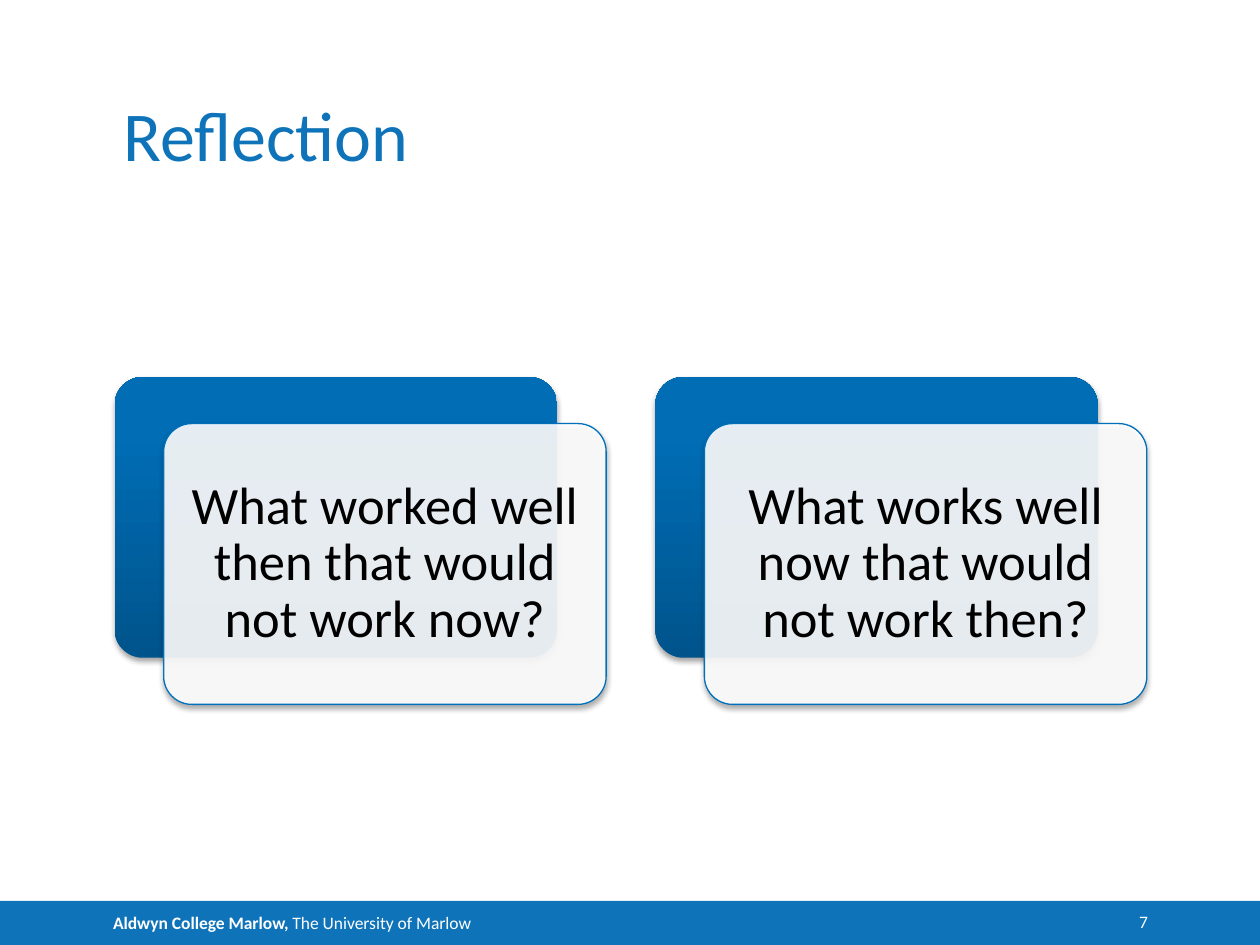
from lxml import etree
from pptx import Presentation
from pptx import util as u
from pptx.dml.color import RGBColor
from pptx.enum import shapes, text
from pptx.oxml.ns import qn

FONT = "Calibri"
BLUE, WHITE, BLACK = "0E73B9", "FFFFFF", "000000"
CARD_W, CARD_H = 8.92, 5.66
QUESTIONS = [
    "What worked well then that would not work now?",
    "What works well now that would not work then?",
]


def color(value):
    return RGBColor.from_string(value)


def box(x, y, w, h):
    return [u.Cm(v) for v in (x, y, w, h)]


def add_run(p, content, size, value, bold=False):
    r = p.add_run()
    r.text = content
    r.font.name = FONT
    r.font.size = u.Pt(size)
    r.font.bold = bold
    r.font.color.rgb = color(value)


def set_frame(tf, anchor, mx, my):
    tf.word_wrap = True
    tf.auto_size = text.MSO_AUTO_SIZE.NONE
    tf.vertical_anchor = anchor
    tf.margin_left = tf.margin_right = u.Cm(mx)
    tf.margin_top = tf.margin_bottom = u.Cm(my)
    return tf.paragraphs[0]


def add_title(s, content):
    sp = s.shapes.title
    sp.left, sp.top, sp.width, sp.height = box(2.31, 1.7, 20.83, 1.93)
    p = set_frame(sp.text_frame, text.MSO_ANCHOR.BOTTOM, 0.18, 0.1)
    p.alignment = text.PP_ALIGN.LEFT
    add_run(p, content, 40, BLUE)


def add_footer(s, college, university, number):
    sp = s.shapes.add_shape(shapes.MSO_SHAPE.RECTANGLE, *box(0, 18.16, 25.4, 0.89))
    sp.shadow.inherit = False
    sp.fill.solid()
    sp.fill.fore_color.rgb = color(BLUE)
    sp.line.fill.background()
    p = set_frame(sp.text_frame, text.MSO_ANCHOR.MIDDLE, 0.25, 0)
    p.alignment = text.PP_ALIGN.LEFT
    p._p.get_or_add_pPr().set("marL", str(u.Cm(2.03)))
    add_run(p, college, 10, WHITE, bold=True)
    add_run(p, university, 10, WHITE)

    sp = s.shapes.add_textbox(*box(22.1, 18.36, 1.04, 0.43))
    p = set_frame(sp.text_frame, text.MSO_ANCHOR.TOP, 0, 0)
    p.alignment = text.PP_ALIGN.RIGHT
    add_run(p, number, 10, WHITE)


def add_shadow(sp):
    sp.shadow.inherit = False
    effects = sp._element.spPr.find(qn("a:effectLst"))
    shadow = etree.SubElement(
        effects, qn("a:outerShdw"), blurRad=str(u.Pt(3.1)), dist=str(u.Pt(1.8)),
        dir="5400000", rotWithShape="0")
    tint = etree.SubElement(shadow, qn("a:srgbClr"), val=BLACK)
    etree.SubElement(tint, qn("a:alpha"), val="35000")


def add_rounded(s, x, y):
    sp = s.shapes.add_shape(
        shapes.MSO_SHAPE.ROUNDED_RECTANGLE, *box(x, y, CARD_W, CARD_H))
    sp.adjustments[0] = 0.1
    add_shadow(sp)
    return sp


def add_backdrop(s, x, y):
    sp = add_rounded(s, x, y)
    sp.fill.gradient()
    sp.fill.gradient_angle = 90
    stops = [(0, "00548C"), (0.8, "006DB5")]
    for stop, (position, value) in zip(sp.fill.gradient_stops, stops):
        stop.position = position
        stop.color.rgb = color(value)
    sp.line.fill.background()


def add_card(s, x, y, question):
    sp = add_rounded(s, x, y)
    sp.fill.solid()
    sp.fill.fore_color.rgb = color(WHITE)
    fill = sp._element.spPr.find(qn("a:solidFill")).find(qn("a:srgbClr"))
    etree.SubElement(fill, qn("a:alpha"), val="90000")
    sp.line.color.rgb = color("0070BB")
    sp.line.width = u.Pt(0.75)
    p = set_frame(sp.text_frame, text.MSO_ANCHOR.MIDDLE, 0.3, 0.3)
    p.alignment = text.PP_ALIGN.CENTER
    p.line_spacing = 0.9
    add_run(p, question, 30, BLACK)


def main():
    prs = Presentation()
    prs.slide_width, prs.slide_height = u.Cm(25.4), u.Cm(19.05)
    s = prs.slides.add_slide(prs.slide_layouts[5])
    add_footer(s, "Aldwyn College Marlow, ", "The University of Marlow", "7")
    add_title(s, "Reflection")
    for i, question in enumerate(QUESTIONS):
        x, y = 2.31 + i * 10.9, 7.6
        add_backdrop(s, x, y)
        add_card(s, x + 0.99, y + 0.94, question)
    prs.save("out.pptx")


if __name__ == "__main__":
    main()
